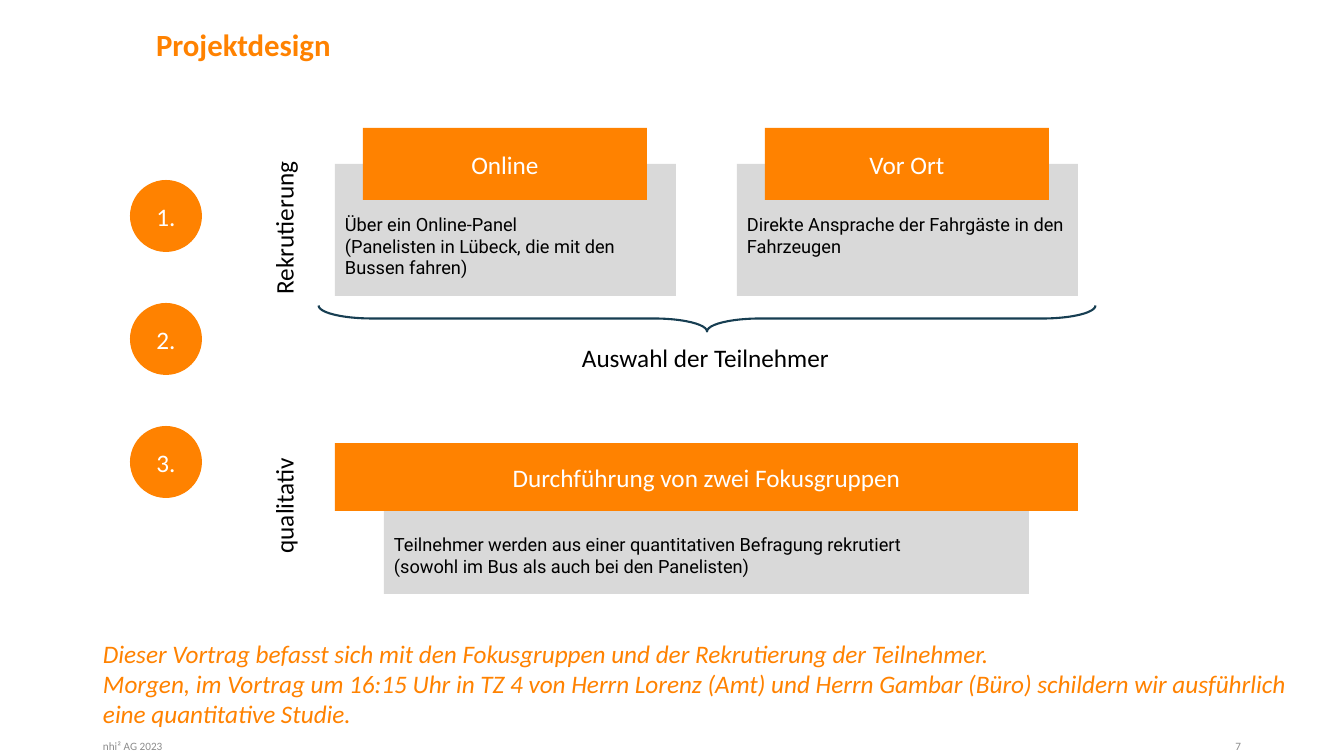
"""Build the project design slide with recruiting, selection and focus groups."""
from pptx import Presentation
from pptx.dml.color import RGBColor
from pptx.enum.shapes import MSO_SHAPE as Shape
from pptx.enum.text import MSO_ANCHOR as Anchor, PP_ALIGN as Align
from pptx.util import Emu, Pt

SCALE = 914400 / 100.8
COLORS = {
    "orange": "FF8200",
    "panel": "D9D9D9",
    "brace": "173E52",
    "footer": "8C8C8C",
    "black": "000000",
    "white": "FFFFFF",
}


def px(length):
    return Emu(round(length * SCALE))


def area(*lengths):
    return [px(length) for length in lengths]


def color(name):
    return RGBColor.from_string(COLORS[name])


def write(box, *texts, size=18, ink="black", font="Calibri", bold=False,
          italic=False, align=Align.LEFT, anchor=Anchor.TOP, wrap=True, top=5):
    frame = box.text_frame
    frame.word_wrap = wrap
    frame.vertical_anchor = anchor
    frame.margin_left = frame.margin_right = px(10)
    frame.margin_top, frame.margin_bottom = px(top), px(5)
    for index, text in enumerate(texts):
        para = frame.add_paragraph() if index else frame.paragraphs[0]
        para.text = text
        para.alignment = align
        for span in para.runs:
            span.font.name = font
            span.font.size = Pt(size)
            span.font.bold = bold
            span.font.italic = italic
            span.font.color.rgb = color(ink)


def add_label(slide, place, *texts, rotation=0, **style):
    box = slide.shapes.add_textbox(*area(*place))
    box.rotation = rotation
    write(box, *texts, **style)


def add_filled(slide, kind, place, fill):
    box = slide.shapes.add_shape(kind, *area(*place))
    box.shadow.inherit = False
    box.fill.solid()
    box.fill.fore_color.rgb = color(fill)
    box.line.fill.background()
    return box


def add_panel(slide, place, *texts, top):
    box = add_filled(slide, Shape.RECTANGLE, place, "panel")
    write(box, *texts, size=13, font="Roboto", top=top)


def add_accent(slide, place, text, kind=Shape.RECTANGLE):
    box = add_filled(slide, kind, place, "orange")
    write(box, text, ink="white", align=Align.CENTER, anchor=Anchor.MIDDLE)


def add_brace(slide, place):
    brace = slide.shapes.add_shape(Shape.RIGHT_BRACE, *area(*place))
    brace.rotation = 90
    brace.adjustments[0] = 2.06
    brace.adjustments[1] = 0.5
    brace.shadow.inherit = False
    brace.fill.background()
    brace.line.color.rgb = color("brace")
    brace.line.width = Pt(1.5)


def add_title(slide, place, text):
    title = slide.shapes.title
    title.left, title.top, title.width, title.height = area(*place)
    write(title, text, size=22, ink="orange", bold=True, anchor=Anchor.MIDDLE)
    title.text_frame.paragraphs[0].line_spacing = 0.9


def main():
    deck = Presentation()
    deck.slide_width, deck.slide_height = area(1344, 756)
    slide = deck.slides.add_slide(deck.slide_layouts[5])
    add_title(slide, (146, 12, 1102, 69), "Projektdesign")

    channels = [
        ("Online", ["Über ein Online-Panel",
                    "(Panelisten in Lübeck, die mit den Bussen fahren)"]),
        ("Vor Ort", ["Direkte Ansprache der Fahrgäste in den Fahrzeugen"]),
    ]
    for column, (heading, details) in enumerate(channels):
        left = 335 + column * 402
        add_panel(slide, (left, 164, 341, 132), *details, top=49)
        add_accent(slide, (left + 28, 128, 284, 72), heading)

    add_brace(slide, (694, -70, 26, 777))
    add_label(slide, (572, 337, 270, 40), "Auswahl der Teilnehmer", wrap=False)

    add_panel(slide, (384, 506, 645, 88),
              "Teilnehmer werden aus einer quantitativen Befragung rekrutiert\v"
              "(sowohl im Bus als auch bei den Panelisten)", top=27)
    add_accent(slide, (335, 443, 743, 68), "Durchführung von zwei Fokusgruppen")

    add_label(slide, (206, 207, 155, 40), "Rekrutierung", rotation=270, wrap=False)
    add_label(slide, (225, 485, 117, 40), "qualitativ", rotation=270, wrap=False)
    for step in range(3):
        add_accent(slide, (130, 180 + step * 123, 72, 72), f"{step + 1}.", Shape.OVAL)

    add_label(slide, (93, 633, 1226, 102),
              "Dieser Vortrag befasst sich mit den Fokusgruppen und der "
              "Rekrutierung der Teilnehmer.",
              "Morgen, im Vortrag um 16:15 Uhr in TZ 4 von Herrn Lorenz (Amt) und "
              "Herrn Gambar (Büro) schildern wir ausführlich eine quantitative Studie.",
              ink="orange", italic=True)
    footer = {"size": 8, "ink": "footer", "anchor": Anchor.MIDDLE}
    add_label(slide, (93, 736, 199, 20), "nhi² AG 2023", **footer)
    add_label(slide, (1055, 736, 196, 20), "7", align=Align.RIGHT, **footer)
    deck.save("out.pptx")


if __name__ == "__main__":
    main()
